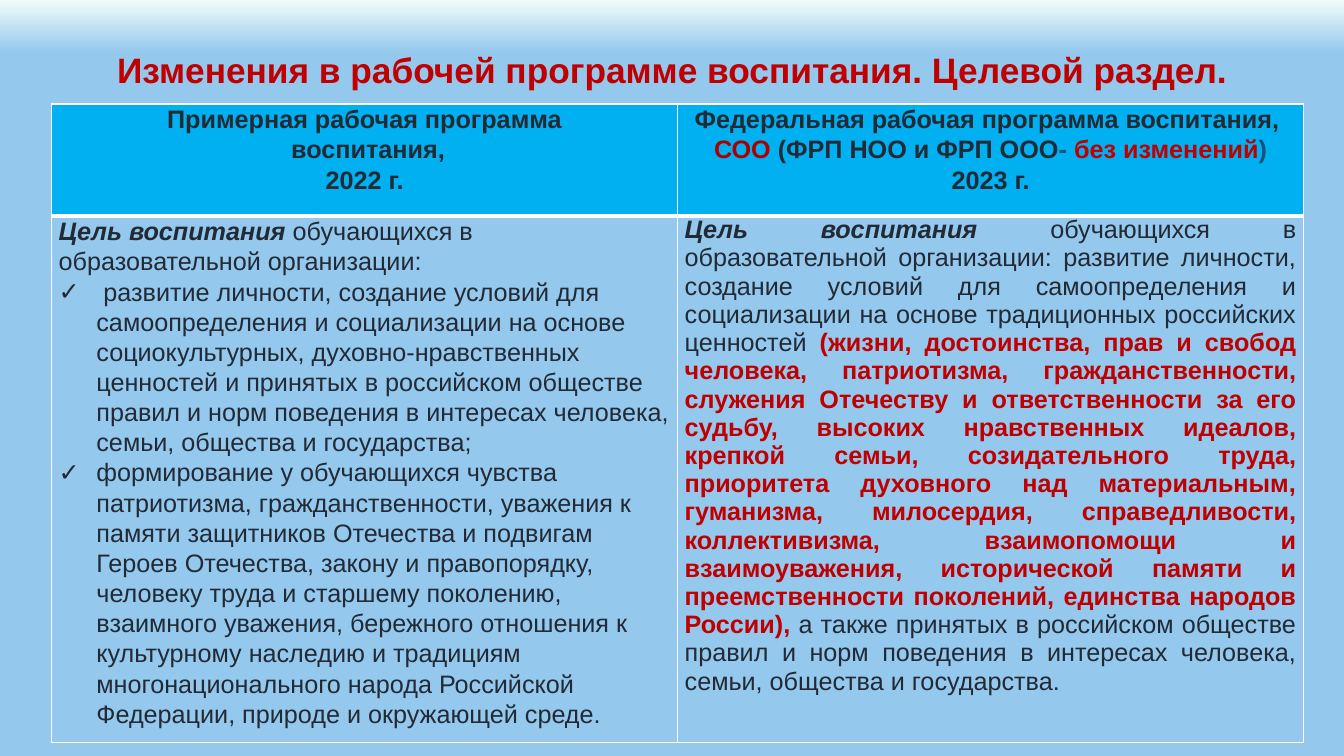
from dataclasses import dataclass

from lxml import etree
from pptx import Presentation
from pptx.dml.color import RGBColor
from pptx.enum.text import MSO_ANCHOR, PP_ALIGN
from pptx.oxml.ns import qn
from pptx.util import Cm, Pt

LEFT, CENTER, JUSTIFY = PP_ALIGN.LEFT, PP_ALIGN.CENTER, PP_ALIGN.JUSTIFY
MIDDLE = MSO_ANCHOR.MIDDLE
TITLE_ONLY = 5


@dataclass(frozen=True)
class Theme:
    font: str = "Arial"
    title_size: float = 25.2
    text_size: float = 18
    line_spacing: float = 1.07
    ink: str = "222A35"
    red: str = "C00000"
    dark_red: str = "AC0000"
    blue: str = "16537F"
    glow: str = "F1FCF9"
    sky: str = "94C8ED"
    header: str = "00B0F0"
    border: str = "FFFFFF"
    thin: float = 1
    thick: float = 3


THEME = Theme()

TITLE = "Изменения в рабочей программе воспитания. Целевой раздел."

# Each paragraph is a list of runs: text, colour, bold, italic
INK, RED = THEME.ink, THEME.red
HEADERS = [
    [
        [("Примерная рабочая программа", INK, True, False)],
        [(" воспитания,", INK, True, False)],
        [("2022 г.", INK, True, False)],
    ],
    [
        [("Федеральная рабочая программа воспитания, ", INK, True, False)],
        [("СОО", THEME.dark_red, True, False),
         (" (ФРП НОО и ФРП ООО", INK, True, False),
         ("- ", THEME.blue, True, False),
         ("без изменений", RED, True, False),
         (")", THEME.blue, True, False)],
        [("2023 г.", INK, True, False)],
    ],
]
GOAL_2022 = [
    ("Цель воспитания", INK, True, True),
    (" обучающихся в образовательной организации:", INK, False, False),
]
TASKS_2022 = [
    [(" развитие личности, создание условий для самоопределения и социализации "
      "на основе социокультурных, духовно-нравственных ценностей и принятых в "
      "российском обществе правил и норм поведения в интересах человека, семьи, "
      "общества и государства;", INK, False, False)],
    [("формирование у обучающихся чувства патриотизма, гражданственности, "
      "уважения к памяти защитников Отечества и подвигам Героев Отечества, "
      "закону и правопорядку, человеку труда и старшему поколению, взаимного "
      "уважения, бережного отношения к культурному наследию и традициям "
      "многонационального народа Российской Федерации, природе и окружающей "
      "среде.", INK, False, False)],
]
GOAL_2023 = [
    ("Цель воспитания ", INK, True, True),
    ("обучающихся в образовательной организации: развитие личности, создание "
     "условий для самоопределения и социализации на основе традиционных "
     "российских ценностей ", INK, False, False),
    ("(жизни, достоинства, прав и свобод человека, патриотизма, "
     "гражданственности, служения Отечеству и ответственности за его судьбу, "
     "высоких нравственных идеалов, крепкой семьи, созидательного труда, "
     "приоритета духовного над материальным, гуманизма, милосердия, "
     "справедливости, коллективизма, взаимопомощи и взаимоуважения, "
     "исторической памяти и преемственности поколений, единства народов "
     "России), ", RED, True, False),
    ("а также принятых в российском обществе правил и норм поведения в "
     "интересах человека, семьи, общества и государства.", INK, False, False),
]


def style_run(r, size, color, bold, italic=False):
    r.font.name = THEME.font
    r.font.size = Pt(size)
    r.font.color.rgb = RGBColor.from_string(color)
    r.font.bold = bold
    r.font.italic = italic


def add_paragraphs(tf, paragraphs, align, spacing=THEME.line_spacing):
    """Append paragraphs, using the empty first one if it is still free."""
    added = []
    for runs in paragraphs:
        p = tf.add_paragraph() if tf.text else tf.paragraphs[0]
        p.alignment = align
        p.line_spacing = spacing
        for text, color, bold, italic in runs:
            r = p.add_run()
            r.text = text
            style_run(r, THEME.text_size, color, bold, italic)
        added.append(p)
    return added


def set_check_bullet(p):
    pPr = p._p.get_or_add_pPr()
    indent = Cm(0.95)
    pPr.set("marL", str(indent))
    pPr.set("indent", str(-indent))
    etree.SubElement(pPr, qn("a:buFont"), typeface=THEME.font)
    etree.SubElement(pPr, qn("a:buChar"), char="✓")


def set_borders(cell, top, bottom):
    widths = {"L": THEME.thin, "R": THEME.thin, "T": top, "B": bottom}
    tcPr = cell._tc.get_or_add_tcPr()
    for i, (side, width) in enumerate(widths.items()):
        ln = etree.Element(qn("a:ln" + side), w=str(Pt(width)))
        fill = etree.SubElement(ln, qn("a:solidFill"))
        etree.SubElement(fill, qn("a:srgbClr"), val=THEME.border)
        tcPr.insert(i, ln)


def format_cell(cell, color, top, bottom):
    cell.fill.solid()
    cell.fill.fore_color.rgb = RGBColor.from_string(color)
    cell.margin_left = cell.margin_right = Cm(0.18)
    cell.margin_top = cell.margin_bottom = 0
    set_borders(cell, top, bottom)


def paint_background(slide):
    fill = slide.background.fill
    fill.gradient()
    fill.gradient_angle = 270
    stops = [(0, THEME.glow), (0.07, THEME.sky)]
    for stop, (position, color) in zip(fill.gradient_stops, stops):
        stop.position = position
        stop.color.rgb = RGBColor.from_string(color)


def place_title(slide, left, top, width, height):
    sp = slide.shapes.title
    sp.left, sp.top, sp.width, sp.height = left, top, width, height
    tf = sp.text_frame
    tf.text = TITLE
    tf.word_wrap = True
    tf.vertical_anchor = MIDDLE
    p = tf.paragraphs[0]
    p.alignment = CENTER
    p.line_spacing = 0.9
    style_run(p.runs[0], THEME.title_size, THEME.red, True)


def place_comparison(slide, left, top, width, height):
    table = slide.shapes.add_table(2, 2, left, top, width, height).table
    header_height = Cm(2.82)
    table.rows[0].height = header_height
    table.rows[1].height = height - header_height

    # Header row and cell formats
    for col, header in enumerate(HEADERS):
        head, body = table.cell(0, col), table.cell(1, col)
        format_cell(head, THEME.header, THEME.thin, THEME.thick)
        format_cell(body, THEME.sky, THEME.thick, THEME.thin)
        add_paragraphs(head.text_frame, header, CENTER)

    # 2022: goal with a check list
    tf = table.cell(1, 0).text_frame
    add_paragraphs(tf, [GOAL_2022], LEFT)
    for p in add_paragraphs(tf, TASKS_2022, LEFT):
        set_check_bullet(p)

    # 2023: goal as running text
    add_paragraphs(table.cell(1, 1).text_frame, [GOAL_2023], JUSTIFY, 1.0)


def main():
    prs = Presentation()
    prs.slide_width, prs.slide_height = Cm(33.87), Cm(19.05)
    slide = prs.slides.add_slide(prs.slide_layouts[TITLE_ONLY])
    paint_background(slide)
    place_title(slide, Cm(2.34), Cm(1.02), Cm(29.21), Cm(1.6))
    place_comparison(slide, Cm(1.3), Cm(2.62), Cm(31.55), Cm(16.1))
    prs.save("out.pptx")


if __name__ == "__main__":
    main()
